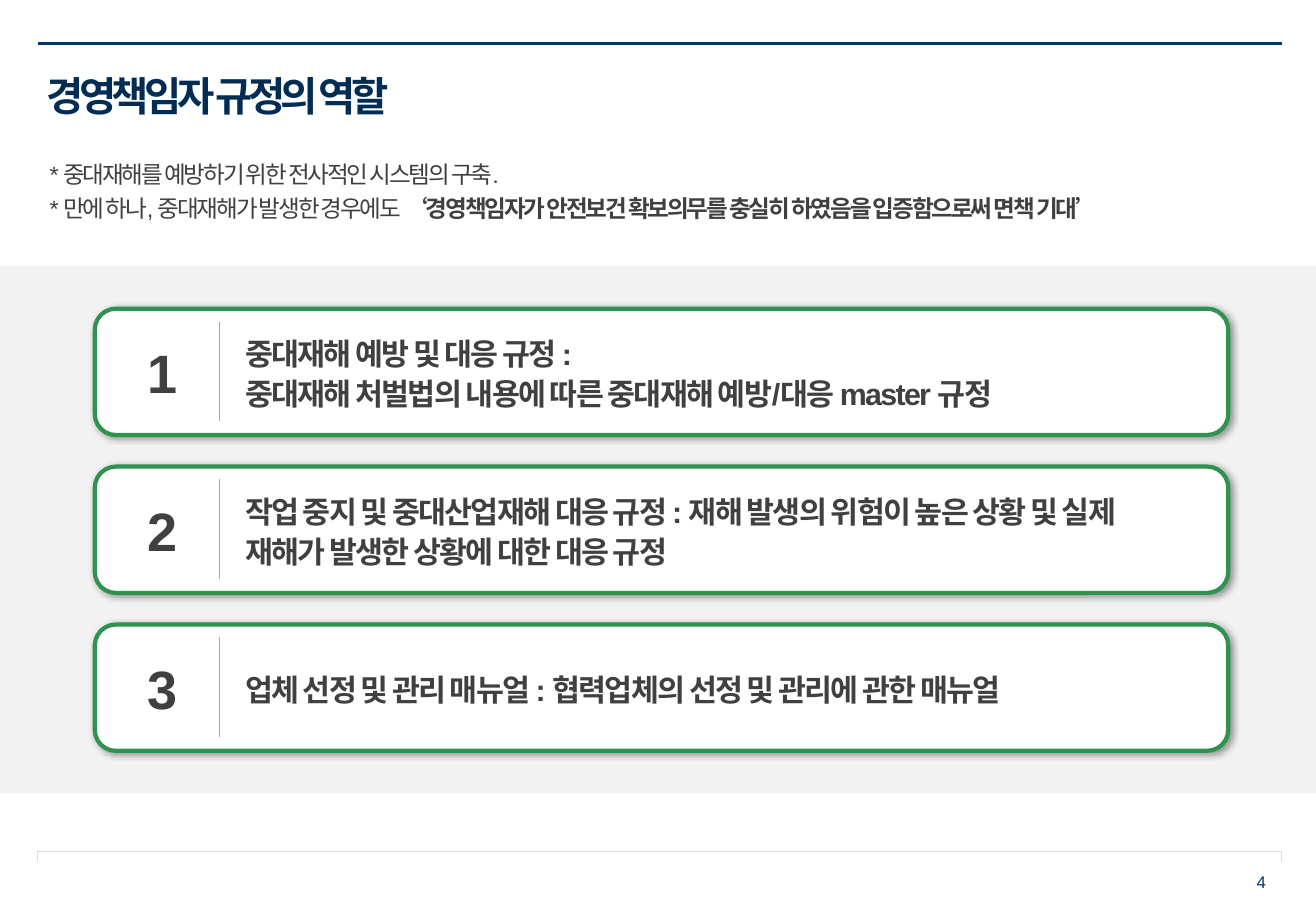
from dataclasses import dataclass

import pptx
import pptx.dml.color
import pptx.enum.dml
import pptx.enum.shapes
import pptx.enum.text
import pptx.oxml
import pptx.oxml.ns
import pptx.util

Pt = pptx.util.Pt
RGBColor = pptx.dml.color.RGBColor
Align = pptx.enum.text.PP_ALIGN
Anchor = pptx.enum.text.MSO_ANCHOR
Shape = pptx.enum.shapes.MSO_SHAPE

NAVY = RGBColor(0x01, 0x36, 0x68)
DEEP_NAVY = RGBColor(0x01, 0x2D, 0x55)
GREEN = RGBColor(0x2E, 0x93, 0x4E)
INK = RGBColor(0x40, 0x40, 0x40)
DIVIDER_GRAY = RGBColor(0xA6, 0xA6, 0xA6)
BRACKET_GRAY = RGBColor(0xD9, 0xD9, 0xD9)
BAND_GRAY = RGBColor(0xF2, 0xF2, 0xF2)
WHITE = RGBColor(0xFF, 0xFF, 0xFF)

SLIDE_WIDTH, SLIDE_HEIGHT = 780, 540
MARGIN_LEFT, MARGIN_RIGHT = 22.3, 759.6
CARD_LEFT, CARD_TOP, CARD_WIDTH, CARD_HEIGHT = 56.2, 183, 671.8, 74.9
CARD_PITCH = 93.6

SHADOW_XML = (
    f'<a:effectLst {pptx.oxml.ns.nsdecls("a")}>'
    '<a:outerShdw blurRad="50800" dist="12700" dir="2700000" algn="tl" rotWithShape="0">'
    '<a:srgbClr val="000000"><a:alpha val="40000"/></a:srgbClr>'
    '</a:outerShdw></a:effectLst>'
)


@dataclass(frozen=True)
class Span:
    text: str
    bold: bool = False


@dataclass(frozen=True)
class Rule:
    """A regulation card: its number and its description."""
    number: int
    description: str


RULES = (
    Rule(1, "중대재해 예방 및 대응 규정 :\n"
            "중대재해 처벌법의 내용에 따른 중대재해 예방/대응 master 규정"),
    Rule(2, "작업 중지 및 중대산업재해 대응 규정 : 재해 발생의 위험이 높은 상황 및 실제 "
            "재해가 발생한 상황에 대한 대응 규정"),
    Rule(3, "업체 선정 및 관리 매뉴얼 : 협력업체의 선정 및 관리에 관한 매뉴얼"),
)
AIMS = (
    (Span("* 중대재해를 예방하기 위한 전사적인 시스템의 구축."),),
    (Span("* 만에 하나, 중대재해가 발생한 경우에도 "),
     Span("‘경영책임자가 안전보건 확보의무를 충실히 하였음을 입증함으로써 면책 기대’", True)),
)


def write_text(frame, paragraphs: tuple[tuple[Span, ...], ...], *, size: float,
               color: RGBColor = INK, spacing: float = 0, align: Align = Align.LEFT,
               anchor: Anchor = Anchor.MIDDLE, line_spacing: float = 1.0,
               space_before: float = 0, wrap: bool = True) -> None:
    frame.word_wrap = wrap
    frame.auto_size = pptx.enum.text.MSO_AUTO_SIZE.NONE
    frame.vertical_anchor = anchor
    for index, spans in enumerate(paragraphs):
        paragraph = frame.add_paragraph() if index else frame.paragraphs[0]
        paragraph.alignment = align
        paragraph.line_spacing = line_spacing
        paragraph.space_before = Pt(space_before if index else 0)
        for span in spans:
            for line_index, line in enumerate(span.text.split("\n")):
                if line_index:
                    paragraph.add_line_break()
                run = paragraph.add_run()
                run.text = line
                run.font.name = "Arial"
                run.font.size = Pt(size)
                run.font.bold = span.bold
                run.font.color.rgb = color
                if spacing:
                    run.font._element.set("spc", str(round(spacing * 100)))


def add_text(slide, left: float, top: float, width: float, height: float,
             paragraphs: tuple[tuple[Span, ...], ...], **text_format) -> None:
    box = slide.shapes.add_textbox(Pt(left), Pt(top), Pt(width), Pt(height))
    write_text(box.text_frame, paragraphs, **text_format)


def add_line(slide, x1: float, y1: float, x2: float, y2: float,
             color: RGBColor, weight: float) -> None:
    line = slide.shapes.add_connector(pptx.enum.shapes.MSO_CONNECTOR.STRAIGHT,
                                      Pt(x1), Pt(y1), Pt(x2), Pt(y2))
    line.line.color.rgb = color
    line.line.width = Pt(weight)
    line._element.spPr.append(
        pptx.oxml.parse_xml(f'<a:effectLst {pptx.oxml.ns.nsdecls("a")}/>'))


def add_rule_card(slide, rule: Rule, top: float) -> None:
    card = slide.shapes.add_shape(Shape.ROUNDED_RECTANGLE, Pt(CARD_LEFT), Pt(top),
                                  Pt(CARD_WIDTH), Pt(CARD_HEIGHT))
    card.fill.solid()
    card.fill.fore_color.rgb = WHITE
    card.line.color.rgb = GREEN
    card.line.width = Pt(2.5)
    card._element.spPr.append(pptx.oxml.parse_xml(SHADOW_XML))
    add_text(slide, 138.2, top, 558, CARD_HEIGHT, ((Span(rule.description, True),),),
             size=18, spacing=-1, line_spacing=1.1)
    add_text(slide, 79.9, top, 32.4, CARD_HEIGHT, ((Span(str(rule.number), True),),),
             size=32, align=Align.CENTER, wrap=False)
    add_line(slide, 129.9, top + 7.6, 129.9, top + 66.8, DIVIDER_GRAY, 0.5)


def add_frame_lines(slide) -> None:
    add_line(slide, MARGIN_LEFT, 25.9, MARGIN_RIGHT, 25.9, NAVY, 2)
    tip, edge = Pt(510.5), Pt(504.8)
    builder = slide.shapes.build_freeform(Pt(MARGIN_LEFT), tip)
    builder.add_line_segments([(Pt(MARGIN_LEFT), edge), (Pt(MARGIN_RIGHT), edge),
                               (Pt(MARGIN_RIGHT), tip)], close=False)
    bracket = builder.convert_to_shape()
    bracket.shadow.inherit = False
    bracket.fill.background()
    bracket.line.color.rgb = BRACKET_GRAY
    bracket.line.width = Pt(0.75)


def add_title(slide) -> None:
    title = slide.shapes.title
    title.left, title.top, title.width, title.height = Pt(20.2), Pt(31.7), Pt(739.4), Pt(46.8)
    write_text(title.text_frame, ((Span("경영책임자 규정의 역할", True),),),
               size=24, color=DEEP_NAVY, spacing=-2.6, line_spacing=1.09)


def main() -> None:
    presentation = pptx.Presentation()
    presentation.slide_width, presentation.slide_height = Pt(SLIDE_WIDTH), Pt(SLIDE_HEIGHT)
    slide = presentation.slides.add_slide(presentation.slide_layouts[5])

    # Heading and aims
    add_frame_lines(slide)
    add_title(slide)
    add_text(slide, MARGIN_LEFT, 91.4, 702, 43.9, AIMS, size=14, spacing=-1.3,
             anchor=Anchor.TOP, space_before=3)

    # Regulation cards on the gray band
    band = slide.shapes.add_shape(Shape.RECTANGLE, 0, Pt(157.7), Pt(SLIDE_WIDTH), Pt(312.5))
    band.shadow.inherit = False
    band.fill.solid()
    band.fill.fore_color.rgb = BAND_GRAY
    band.line.fill.background()
    for index, rule in enumerate(RULES):
        add_rule_card(slide, rule, CARD_TOP + index * CARD_PITCH)

    # Page number
    add_text(slide, 581.8, 508.3, 175.7, 28.8, ((Span("4"),),), size=10, color=NAVY,
             align=Align.RIGHT)
    presentation.save("out.pptx")


if __name__ == "__main__":
    main()
